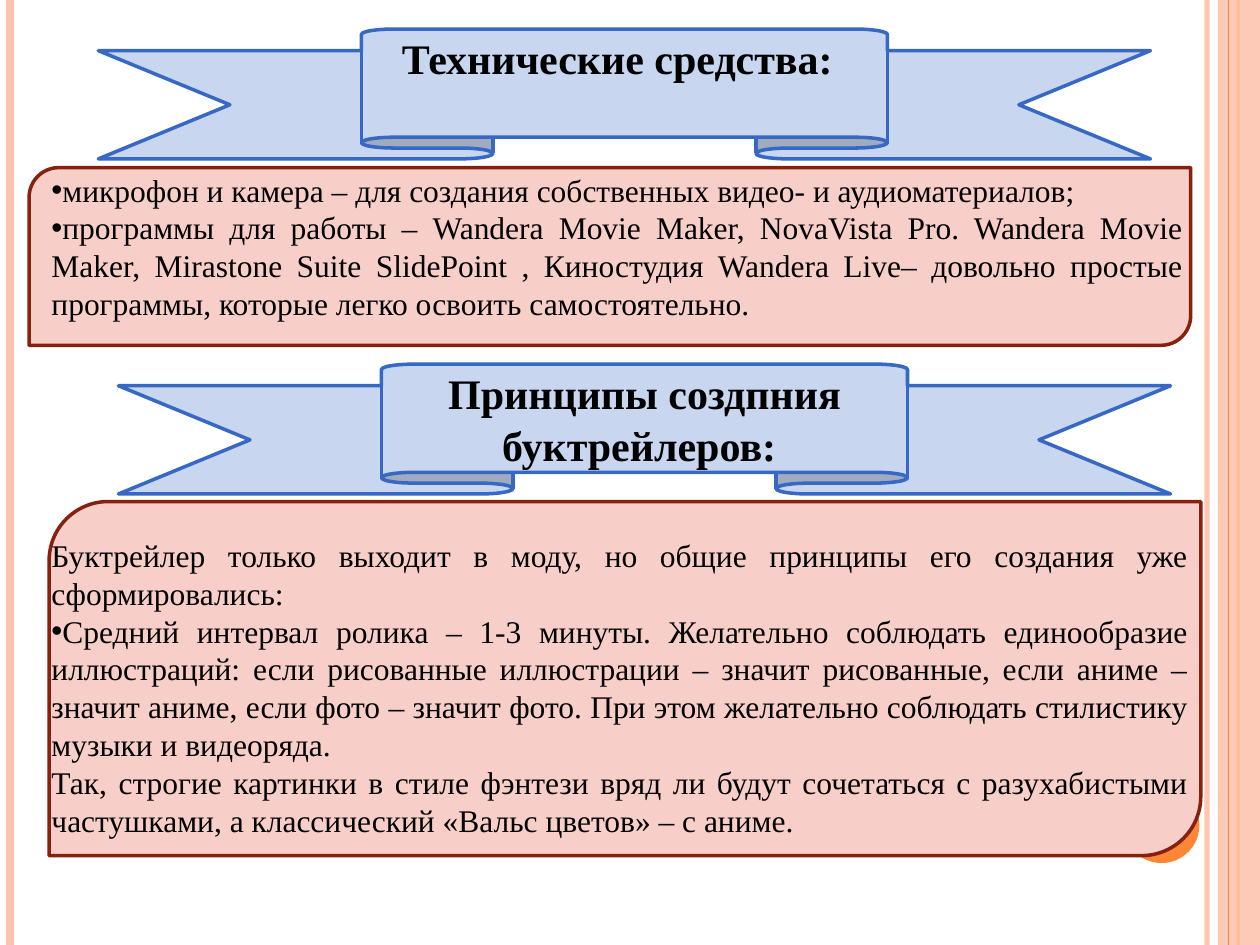
from lxml import etree
from pptx import Presentation
from pptx import util as u
from pptx.dml.color import RGBColor
from pptx.enum import shapes, text
from pptx.oxml.ns import qn

FONT = "Times New Roman"
COLORS = {
    "peach": "FEC3AE", "orange": "FE8637", "pink": "F8CFC8",
    "maroon": "862110", "sky": "C8D6F0", "blue": "3668C4", "ink": "000000",
}
WIDTH, HEIGHT = 720, 540
BULLET = "•"

# Content: (bullet, paragraph)
TOOLS_TITLE = "Технические средства:"
TOOLS = [
    (BULLET, "микрофон и камера – для создания собственных видео- и аудиоматериалов;"),
    (BULLET, "программы для работы – Wandera Movie Maker, NovaVista Pro. Wandera Movie "
             "Maker, Mirastone Suite SlidePoint , Киностудия Wandera Live– довольно простые "
             "программы, которые легко освоить самостоятельно."),
]
PRINCIPLES_TITLE = "Принципы создпния буктрейлеров: "
PRINCIPLES = [
    (None, "Буктрейлер только выходит в моду, но общие принципы его создания уже "
           "сформировались:"),
    (BULLET, "Средний интервал ролика – 1-3 минуты. Желательно соблюдать единообразие "
             "иллюстраций: если рисованные иллюстрации – значит рисованные, если аниме – "
             "значит аниме, если фото – значит фото. При этом желательно соблюдать "
             "стилистику музыки и видеоряда."),
    (None, "Так, строгие картинки в стиле фэнтези вряд ли будут сочетаться с разухабистыми "
           "частушками, а классический «Вальс цветов» – с аниме."),
]

# Layout: left, top, width, height
PANELS = [(28.1, 286.6, 658.1, 202.3), (16.6, 95.8, 663.8, 101.5)]
RIBBON_SIZE = (601.2, 74.2)
TOOLS_RIBBON = (56.2, 16.6, *RIBBON_SIZE)
PRINCIPLES_RIBBON = (67.7, 208.1, *RIBBON_SIZE)
TITLE_BOX = (22.3, 14.5, 661, 40)
TOOLS_BOX = (22.3, 94, 661, 98)
PRINCIPLES_BOX = (22.3, 302.7, 663.8, 182)
# Vertical lines: x, colour, width, opacity in percent
LEFT_LINES = [(689.8, "peach", 3, 93), (5.8, "peach", 4.5, 100), (707.8, "orange", 1.5, 100)]
EDGE_BAND = (696, 0, 24, HEIGHT)
EDGE_LINE = (702, "orange", 0.75, 100)
DOT = (642.2, 450, 43.2, 43.2)


def color(name):
    return RGBColor.from_string(COLORS[name])


def points(values):
    return [u.Pt(value) for value in values]


def set_opacity(element, percent):
    if percent < 100:
        rgb = next(element.iter(qn("a:srgbClr")))
        etree.SubElement(rgb, qn("a:alpha"), val=str(percent * 1000))


def add_line(slide, x, name, width, opacity):
    line = slide.shapes.add_connector(
        shapes.MSO_CONNECTOR.STRAIGHT, *points((x, 0, x, HEIGHT)))
    line.line.color.rgb = color(name)
    line.line.width = u.Pt(width)
    properties = line._element.spPr
    set_opacity(properties, opacity)
    etree.SubElement(properties, qn("a:effectLst"))


def add_shape(slide, kind, box, fill, outline=None, opacity=100):
    shape = slide.shapes.add_shape(kind, *points(box))
    shape.shadow.inherit = False
    shape.fill.solid()
    shape.fill.fore_color.rgb = color(fill)
    set_opacity(shape._element.spPr, opacity)
    if outline:
        shape.line.color.rgb = color(outline)
        shape.line.width = u.Pt(2)
    else:
        shape.line.fill.background()
    return shape


def write(shape, paragraphs, size, spacing, alignment, bold=False):
    frame = shape.text_frame
    frame.word_wrap = True
    frame.text = "\n".join(words for _, words in paragraphs)
    for paragraph, (bullet, _) in zip(frame.paragraphs, paragraphs):
        paragraph.alignment = alignment
        paragraph.line_spacing = u.Pt(spacing)
        for run in paragraph.runs:
            run.font.name = FONT
            run.font.size = u.Pt(size)
            run.font.bold = bold
            run.font.color.rgb = color("ink")
        if bullet:
            properties = paragraph._p.get_or_add_pPr()
            properties.set("marL", "0")
            properties.set("indent", "0")
            etree.SubElement(properties, qn("a:buFont"), typeface="Arial")
            etree.SubElement(properties, qn("a:buChar"), char=bullet)


def write_title(shape, title):
    write(shape, [(None, title)], 24, 29.5, text.PP_ALIGN.CENTER, bold=True)


def write_body(slide, box, paragraphs):
    body = slide.shapes.add_textbox(*points(box))
    write(body, paragraphs, 18, 21.6, text.PP_ALIGN.JUSTIFY)


def main():
    presentation = Presentation()
    presentation.slide_width, presentation.slide_height = points((WIDTH, HEIGHT))
    slide = presentation.slides.add_slide(presentation.slide_layouts[6])
    kinds = shapes.MSO_SHAPE

    # Edge decoration
    for line in LEFT_LINES:
        add_line(slide, *line)
    add_shape(slide, kinds.RECTANGLE, EDGE_BAND, "peach", opacity=87)
    add_line(slide, *EDGE_LINE)
    add_shape(slide, kinds.OVAL, DOT, "orange")

    # Panels and ribbons
    for box in PANELS:
        add_shape(slide, kinds.ROUND_2_DIAG_RECTANGLE, box, "pink", "maroon")
    add_shape(slide, kinds.UP_RIBBON, TOOLS_RIBBON, "sky", "blue")
    ribbon = add_shape(slide, kinds.UP_RIBBON, PRINCIPLES_RIBBON, "sky", "blue")

    # Titles and body text
    write_title(slide.shapes.add_textbox(*points(TITLE_BOX)), TOOLS_TITLE)
    ribbon.text_frame.vertical_anchor = text.MSO_ANCHOR.MIDDLE
    write_title(ribbon, PRINCIPLES_TITLE)
    write_body(slide, TOOLS_BOX, TOOLS)
    write_body(slide, PRINCIPLES_BOX, PRINCIPLES)

    presentation.save("out.pptx")


if __name__ == "__main__":
    main()
